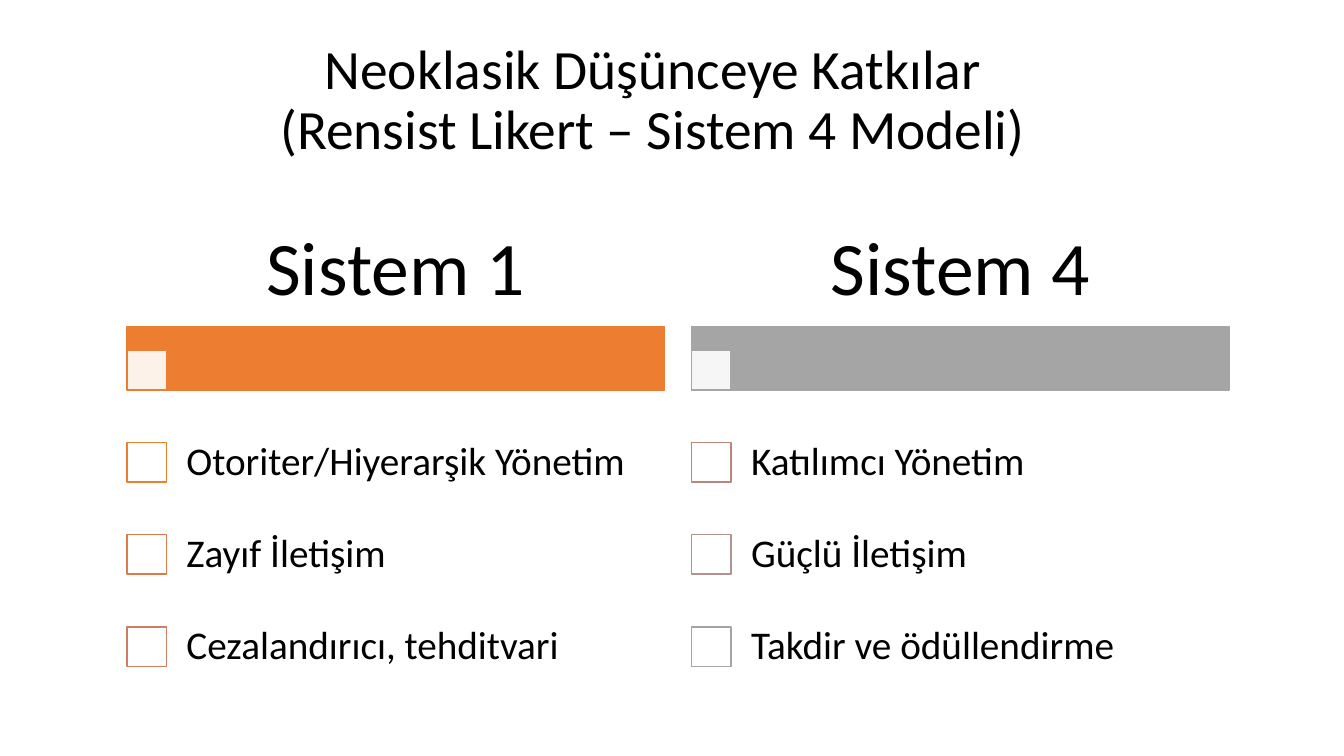
from dataclasses import dataclass

from lxml import etree
from pptx import Presentation
from pptx.dml.color import RGBColor
from pptx.enum.shapes import MSO_SHAPE
from pptx.enum.text import MSO_ANCHOR, MSO_AUTO_SIZE, PP_ALIGN
from pptx.oxml.ns import qn
from pptx.util import Inches, Pt

RECTANGLE = MSO_SHAPE.RECTANGLE
MIDDLE = MSO_ANCHOR.MIDDLE
NO_FIT = MSO_AUTO_SIZE.NONE
CENTER, LEFT = PP_ALIGN.CENTER, PP_ALIGN.LEFT
TITLE_ONLY = 5


@dataclass(frozen=True)
class Theme:
    font: str = "Calibri"
    ink: str = "000000"
    paper: str = "FFFFFF"
    orange: str = "ED7D31"
    gray: str = "A5A5A5"
    title_size: float = 39.6
    heading_size: float = 54
    item_size: float = 28
    line_width: float = 1
    line_spacing: float = 0.9


def write_text(frame, text, *, theme, size, align=LEFT, inset=(0.1, 0.05)):
    frame.word_wrap = True
    frame.auto_size = NO_FIT
    frame.vertical_anchor = MIDDLE
    frame.margin_left = frame.margin_right = Inches(inset[0])
    frame.margin_top = frame.margin_bottom = Inches(inset[1])
    para = frame.paragraphs[0]
    para.text = text
    para.alignment = align
    para.line_spacing = theme.line_spacing
    for span in para.runs:
        span.font.name = theme.font
        span.font.size = Pt(size)
        span.font.color.rgb = RGBColor.from_string(theme.ink)


class SlideBuilder:
    def __init__(self, deck, theme):
        self.theme = theme
        self.page = deck.slides.add_slide(deck.slide_layouts[TITLE_ONLY])

    def title(self, text, area):
        box = self.page.shapes.title
        box.left, box.top, box.width, box.height = map(Inches, area)
        write_text(box.text_frame, text, theme=self.theme,
                   size=self.theme.title_size, align=CENTER)

    def text(self, text, area, **style):
        box = self.page.shapes.add_textbox(*map(Inches, area))
        write_text(box.text_frame, text, theme=self.theme, **style)

    def rectangle(self, area, fill, line, opacity=100):
        box = self.page.shapes.add_shape(RECTANGLE, *map(Inches, area))
        box.shadow.inherit = False
        box.fill.solid()
        box.fill.fore_color.rgb = RGBColor.from_string(fill)
        box.line.color.rgb = RGBColor.from_string(line)
        box.line.width = Pt(self.theme.line_width)
        if opacity < 100:
            color = box.fill._xPr.find(qn("a:solidFill"))[0]
            etree.SubElement(color, qn("a:alpha"), val=str(opacity * 1000))

    def system_column(self, left, heading, accent, items):
        width, square, text_offset = 5.33, 0.39, 0.37
        first_item, item_height = 4.13, 0.915
        self.rectangle((left, 3.24, width, 0.63), accent, accent)
        self.rectangle((left, 3.48, square, square), self.theme.paper, accent, opacity=90)
        self.text(heading, (left, 2.12, width, 1.13), size=self.theme.heading_size,
                  align=CENTER, inset=(0.11, 0.07))
        for index, (label, outline) in enumerate(items):
            top = first_item + index * item_height
            self.rectangle((left, top + 0.26, square, square), self.theme.paper, outline)
            self.text(label, (left + text_offset, top, width - text_offset, item_height),
                      size=self.theme.item_size, inset=(0.22, 0.22))


def main():
    theme = Theme()
    deck = Presentation()
    deck.slide_width, deck.slide_height = Inches(13.33), Inches(7.5)
    slide = SlideBuilder(deck, theme)
    slide.title("Neoklasik Düşünceye Katkılar\n(Rensist Likert – Sistem 4 Modeli)",
                (2.54, 0.28, 7.87, 1.45))
    systems = [
        ("Sistem 1", theme.orange, [
            ("Otoriter/Hiyerarşik Yönetim", theme.orange),
            ("Zayıf İletişim", "DC7A4B"),
            ("Cezalandırıcı, tehditvari", "CC7D64"),
        ]),
        ("Sistem 4", theme.gray, [
            ("Katılımcı Yönetim", "BD867B"),
            ("Güçlü İletişim", "B09391"),
            ("Takdir ve ödüllendirme", theme.gray),
        ]),
    ]
    for index, (heading, accent, items) in enumerate(systems):
        slide.system_column(1.26 + index * 5.6, heading, accent, items)
    deck.save("out.pptx")


if __name__ == "__main__":
    main()
